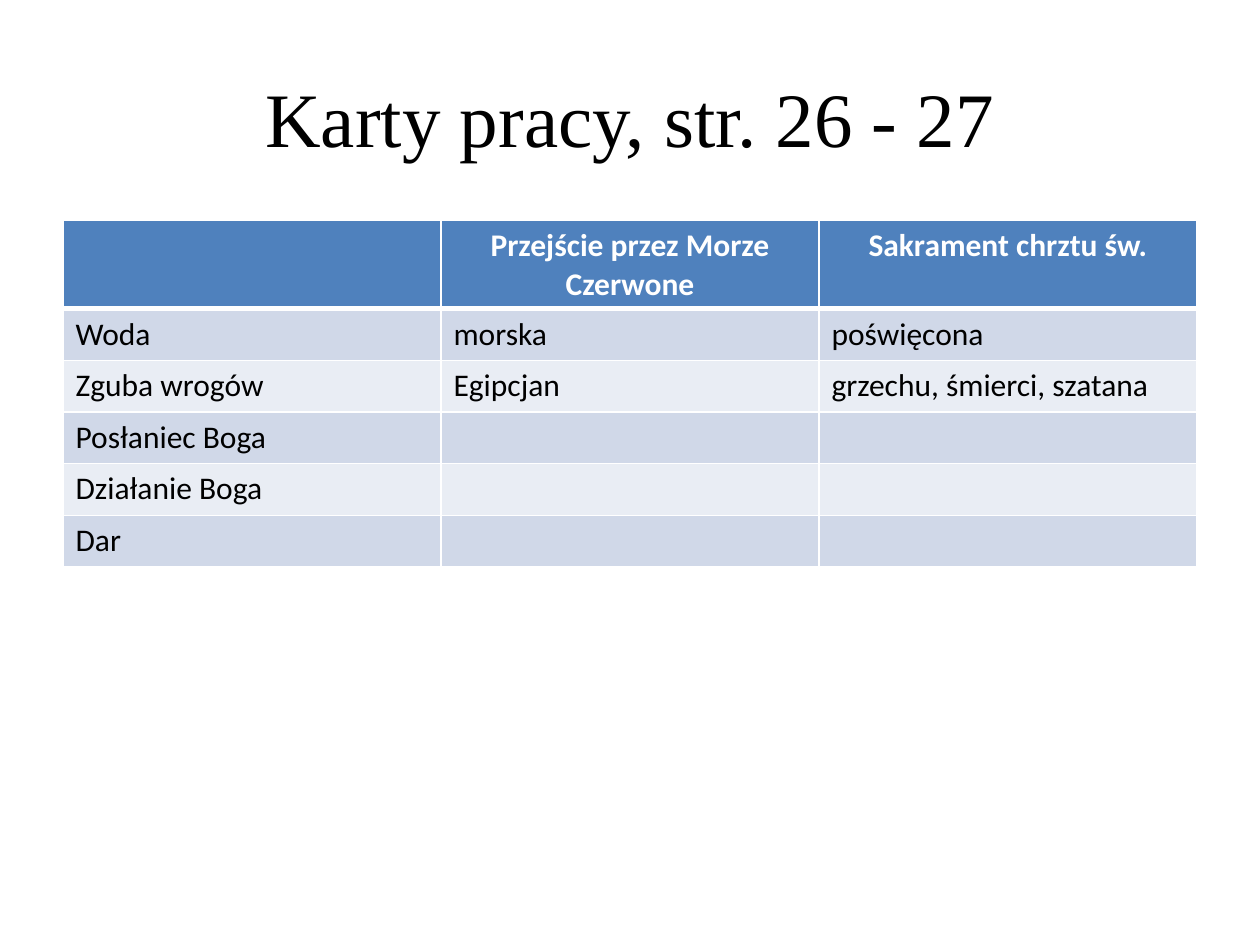
from lxml.etree import SubElement
from pptx import Presentation
from pptx.dml.color import RGBColor
from pptx.enum.text import MSO_ANCHOR, PP_ALIGN
from pptx.oxml.ns import qn
from pptx.util import Inches, Pt

WHITE = RGBColor(0xFF, 0xFF, 0xFF)
BLACK = RGBColor(0x00, 0x00, 0x00)
HEADER_BLUE = RGBColor(0x4F, 0x81, 0xBD)
BANDS = (RGBColor(0xE9, 0xED, 0xF4), RGBColor(0xD0, 0xD8, 0xE8))

COMPARISON = [
    ("", "Przejście przez Morze Czerwone", "Sakrament chrztu św."),
    ("Woda", "morska", "poświęcona"),
    ("Zguba wrogów", "Egipcjan", "grzechu, śmierci, szatana"),
    ("Posłaniec Boga", "", ""),
    ("Działanie Boga", "", ""),
    ("Dar", "", ""),
]


def write(frame, text, size=18, font="Calibri", color=BLACK, bold=False, align=PP_ALIGN.LEFT):
    """Put one formatted paragraph into a text frame."""
    para = frame.paragraphs[0]
    para.alignment = align
    para.font.size = Pt(size)
    if text:
        span = para.add_run()
        span.text = text
        span.font.name = font
        span.font.size = Pt(size)
        span.font.bold = bold
        span.font.color.rgb = color


class Worksheet:
    """Hold the deck, its current page and the style of its elements."""

    def __init__(self, width=10, height=7.5):
        """Start a deck with one blank page."""
        self.deck = Presentation()
        self.deck.slide_width = Inches(width)
        self.deck.slide_height = Inches(height)
        self.page = self.deck.slides.add_slide(self.deck.slide_layouts[6])

    def area(self, left, top, width, height):
        """Turn shares of the slide into lengths."""
        across, down = self.deck.slide_width, self.deck.slide_height
        return int(left * across), int(top * down), int(width * across), int(height * down)

    def title(self, text, *shares):
        """Add a centred title."""
        box = self.page.shapes.add_textbox(*self.area(*shares))
        box.text_frame.word_wrap = True
        box.text_frame.vertical_anchor = MSO_ANCHOR.MIDDLE
        write(box.text_frame, text, size=44, font="Times New Roman", align=PP_ALIGN.CENTER)

    def border(self, cell, side, width):
        """Draw one white side of a cell."""
        line = SubElement(cell._tc.get_or_add_tcPr(), qn(f"a:ln{side}"), w=str(Pt(width)))
        fill = SubElement(line, qn("a:solidFill"))
        SubElement(fill, qn("a:srgbClr"), val=str(WHITE))

    def table(self, rows, row_height, *shares):
        """Add a banded table with a header row."""
        place = self.area(*shares)
        frame = self.page.shapes.add_table(len(rows), len(rows[0]), *place)
        for index, texts in enumerate(rows):
            frame.table.rows[index].height = Inches(row_height)
            header = index == 0
            for column, text in enumerate(texts):
                cell = frame.table.cell(index, column)
                for side in "LRTB":
                    thick = (header and side == "B") or (index == 1 and side == "T")
                    self.border(cell, side, 3 if thick else 1)
                cell.fill.solid()
                cell.fill.fore_color.rgb = HEADER_BLUE if header else BANDS[index % 2]
                write(cell.text_frame, text, bold=header, color=WHITE if header else BLACK,
                      align=PP_ALIGN.CENTER if header else PP_ALIGN.LEFT)
        frame.height = place[3]


def main():
    """Build and save the worksheet slide."""
    sheet = Worksheet()
    sheet.title("Karty pracy, str. 26 - 27", 0.05, 0.04, 0.9, 1 / 6)
    sheet.table(COMPARISON, 0.41, 0.05, 1.75 / 7.5, 0.9, 2.73 / 7.5)
    sheet.deck.save("out.pptx")


if __name__ == "__main__":
    main()
